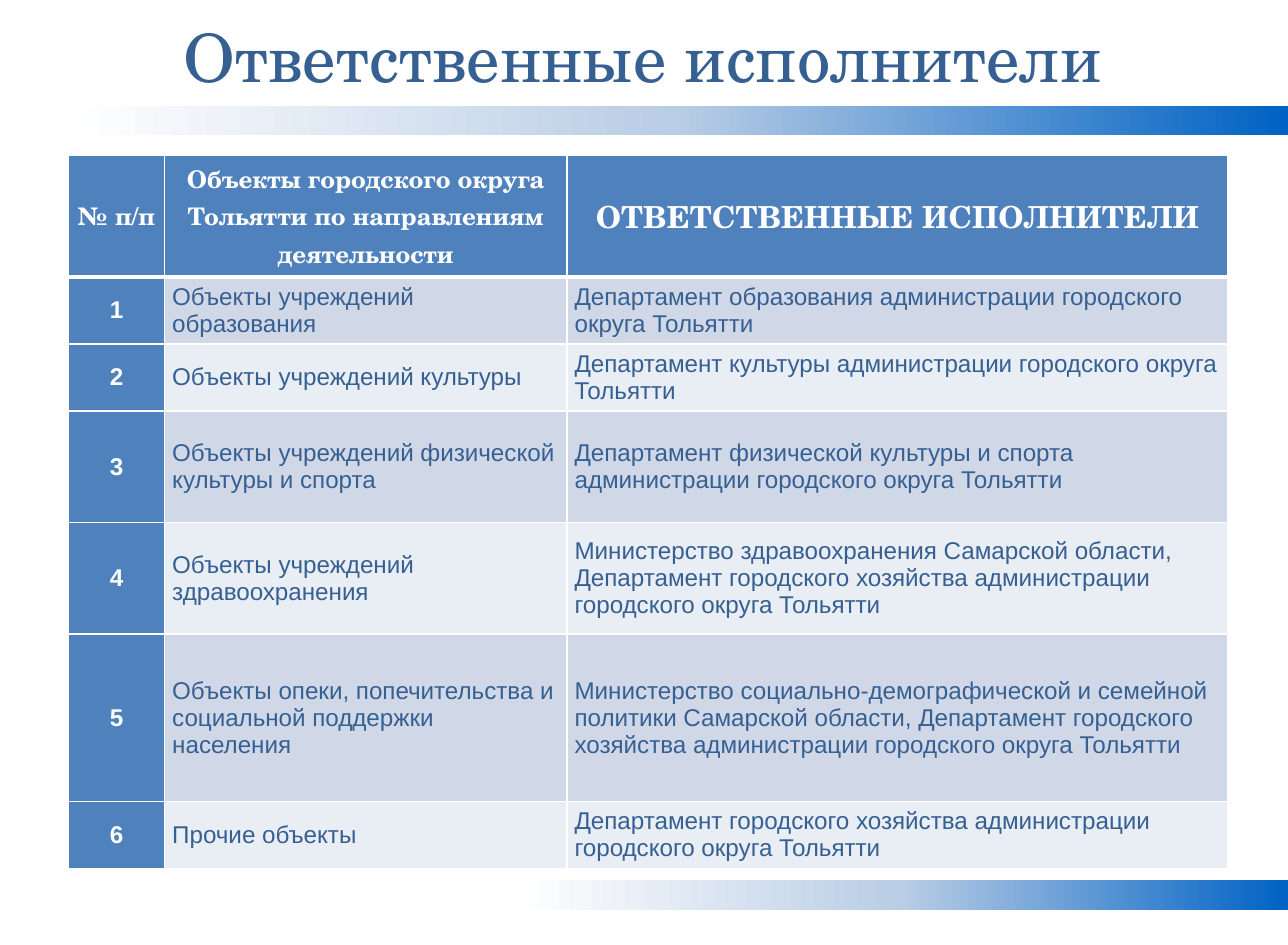
"""Builds the slide listing the departments responsible for each group of facilities."""
import copy

import pptx
import pptx.dml.color
import pptx.enum.shapes
import pptx.enum.text
import pptx.oxml
import pptx.oxml.ns
import pptx.util

Cm, Inches, Pt = pptx.util.Cm, pptx.util.Inches, pptx.util.Pt
PP_ALIGN, MSO_ANCHOR = pptx.enum.text.PP_ALIGN, pptx.enum.text.MSO_ANCHOR
SERIF, SANS = "TeX Gyre Schola", "Arial"
WHITE, NAVY, BLUE = "FFFFFF", "366092", "4F81BD"
BANDS = ["D0D8E8", "E9EDF4"]
GRADIENT = [(0, "0062C4"), (0.5, "B9CDE5"), (1, WHITE)]
BANNERS = [(0.97, 11.21), (8.07, 7.09)]
COLUMNS = [0.88, 3.69, 6.06]
TABLE_HEIGHT, HEADER_HEIGHT = 6.54, 1.12
ROW_SHARES = [3, 3, 5, 5, 7.5, 3]
HEADER = [
    "№ п/п",
    "Объекты городского округа Тольятти по направлениям деятельности",
    "ОТВЕТСТВЕННЫЕ ИСПОЛНИТЕЛИ",
]
EXECUTORS = [
    ("Объекты учреждений образования",
     "Департамент образования администрации городского округа Тольятти"),
    ("Объекты учреждений культуры",
     "Департамент культуры администрации городского округа Тольятти"),
    ("Объекты учреждений физической культуры и спорта",
     "Департамент физической культуры и спорта администрации городского округа Тольятти"),
    ("Объекты учреждений здравоохранения",
     "Министерство здравоохранения Самарской области, Департамент городского хозяйства "
     "администрации городского округа Тольятти"),
    ("Объекты опеки, попечительства и социальной поддержки населения",
     "Министерство социально-демографической и семейной политики Самарской области, "
     "Департамент городского хозяйства администрации городского округа Тольятти"),
    ("Прочие объекты",
     "Департамент городского хозяйства администрации городского округа Тольятти"),
]


def rgb(value):
    return pptx.dml.color.RGBColor.from_string(value)


def write(p, text, font, size, color, bold=False, align=PP_ALIGN.CENTER):
    p.text = text
    p.alignment = align
    p.font.name, p.font.size, p.font.bold = font, Pt(size), bold
    p.font.color.rgb = rgb(color)


prs = pptx.Presentation()
prs.slide_width = Cm(30)
prs.slide_height = Cm(22)
s = prs.slides.add_slide(prs.slide_layouts[6])

for top, width in BANNERS:
    sp = s.shapes.add_shape(pptx.enum.shapes.MSO_SHAPE.RECTANGLE,
                            prs.slide_width - Inches(width), Inches(top),
                            Inches(width), Inches(0.27))
    sp.shadow.inherit = False
    sp.line.fill.background()
    sp.fill.gradient()
    sp.fill.gradient_angle = 180
    stops = sp._element.spPr.find(".//" + pptx.oxml.ns.qn("a:gsLst"))
    stops.append(copy.deepcopy(stops[0]))
    for stop, (position, color) in zip(sp.fill.gradient_stops, GRADIENT):
        stop.position = position
        stop.color.rgb = rgb(color)

title = s.shapes.add_textbox(Inches(0.38), Inches(0.24), Inches(11.04), Inches(0.55))
tf = title.text_frame
tf.word_wrap = True
tf.vertical_anchor = MSO_ANCHOR.MIDDLE
tf.margin_left = tf.margin_right = Inches(0.12)
tf.margin_top = tf.margin_bottom = Inches(0.06)
write(tf.paragraphs[0], "Ответственные исполнители", SERIF, 44, NAVY)

unit = (TABLE_HEIGHT - HEADER_HEIGHT) / sum(ROW_SHARES)
rows = [HEADER_HEIGHT] + [share * unit for share in ROW_SHARES]
table = s.shapes.add_table(len(rows), len(COLUMNS), Inches(0.63), Inches(1.42),
                           Inches(sum(COLUMNS)), Inches(TABLE_HEIGHT)).table
for column, width in zip(table.columns, COLUMNS):
    column.width = Inches(width)
for row, height in zip(table.rows, rows):
    row.height = Inches(height)

lines = [HEADER] + [(str(n), *names) for n, names in enumerate(EXECUTORS, 1)]
for i, line in enumerate(lines):
    for j, text in enumerate(line):
        cell = table.cell(i, j)
        cell.vertical_anchor = MSO_ANCHOR.MIDDLE
        cell.margin_left = cell.margin_right = Inches(0.07)
        cell.margin_top = cell.margin_bottom = 0
        for side in "LRTB":
            thick = (i, side) in [(0, "B"), (1, "T")]
            cell._tc.get_or_add_tcPr().append(pptx.oxml.parse_xml(
                f'<a:ln{side} {pptx.oxml.ns.nsdecls("a")} w="{Pt(3 if thick else 1)}">'
                f'<a:solidFill><a:srgbClr val="{WHITE}"/></a:solidFill></a:ln{side}>'))
        cell.fill.solid()
        p = cell.text_frame.paragraphs[0]
        if i == 0:
            cell.fill.fore_color.rgb = rgb(BLUE)
            write(p, text, SERIF, 20 if j == 2 else 16, WHITE, bold=True)
        elif j == 0:
            cell.fill.fore_color.rgb = rgb(BLUE)
            write(p, text, SANS, 16, WHITE, bold=True)
        else:
            cell.fill.fore_color.rgb = rgb(BANDS[(i - 1) % 2])
            write(p, text, SANS, 16, NAVY, align=PP_ALIGN.LEFT)

prs.save("out.pptx")
